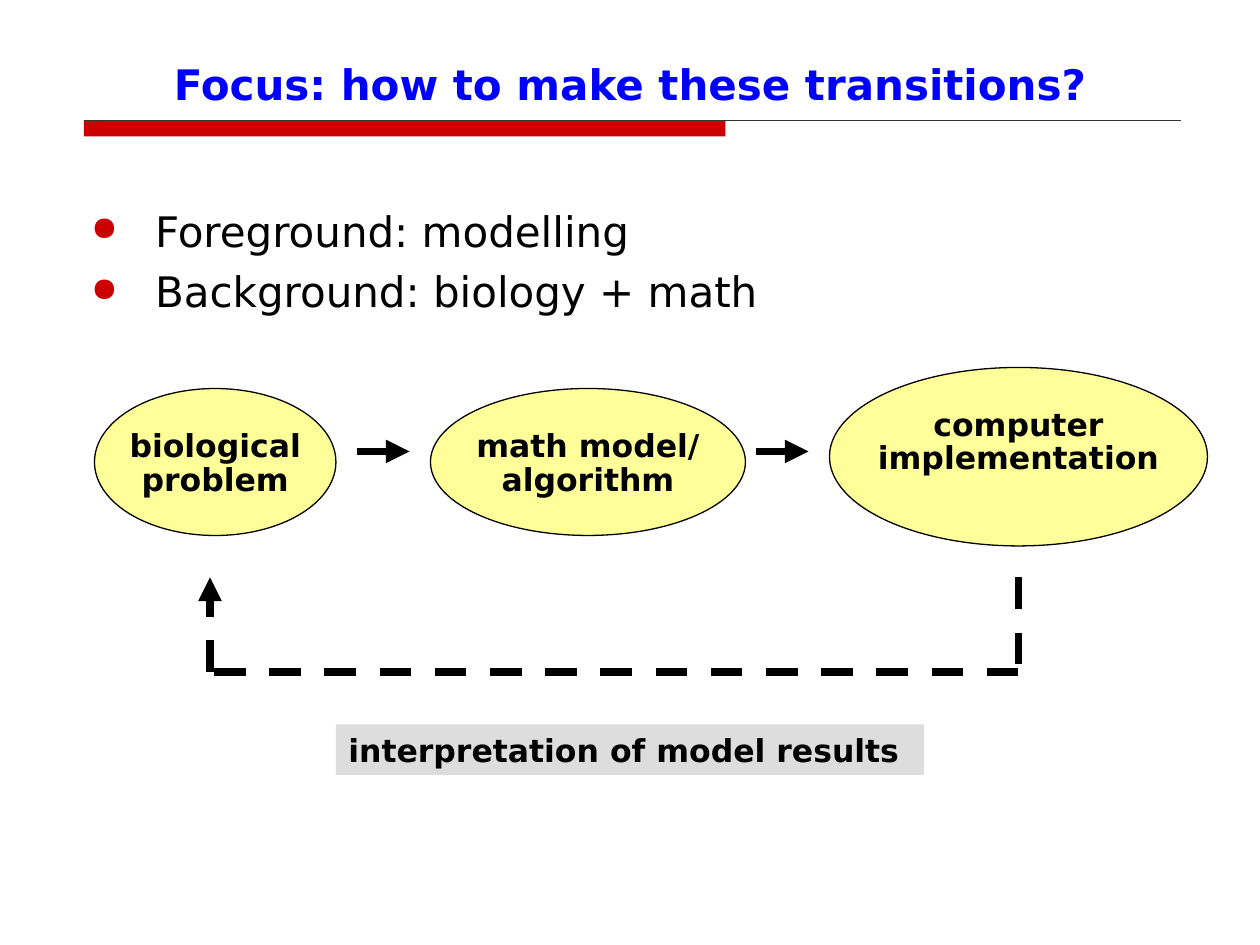
from dataclasses import dataclass
from itertools import pairwise

from lxml.etree import SubElement
from pptx import Presentation
from pptx.dml.color import RGBColor
from pptx.enum.dml import MSO_LINE
from pptx.enum.shapes import MSO_CONNECTOR, MSO_SHAPE
from pptx.enum.text import MSO_ANCHOR, PP_ALIGN
from pptx.oxml.ns import qn
from pptx.util import Emu, Pt

PX = 7620


@dataclass(frozen=True)
class Theme:
    font: str = "DejaVu Sans"
    bullet_font: str = "OpenSymbol"
    title: str = "0000FF"
    ink: str = "000000"
    accent: str = "CC0000"
    rule: str = "333333"
    bubble: str = "FFFF99"
    label: str = "DDDDDD"
    heading_size: int = 24
    label_size: int = 18
    thin: float = 0.75
    thick: float = 4.5


THEME = Theme()


def px(*lengths):
    return [Emu(length * PX) for length in lengths]


def apply(target, values):
    for name, value in values.items():
        setattr(target, name, value)


def style_font(font, size, color, bold):
    apply(font, {"name": THEME.font, "size": Pt(size), "bold": bold})
    font.color.rgb = RGBColor.from_string(color)


def add_filled(slide, preset, box, fill, outline=None):
    shape = slide.shapes.add_shape(preset, *px(*box))
    shape.shadow.inherit = False
    shape.fill.solid()
    shape.fill.fore_color.rgb = RGBColor.from_string(fill)
    if outline:
        shape.line.color.rgb = RGBColor.from_string(outline)
        shape.line.width = Pt(THEME.thin)
    else:
        shape.line.fill.background()
    return shape


def add_line(slide, start, end, color, width, arrow=False, dashed=False):
    connector = slide.shapes.add_connector(MSO_CONNECTOR.STRAIGHT, *px(*start, *end))
    connector.line.color.rgb = RGBColor.from_string(color)
    connector.line.width = Pt(width)
    if dashed:
        connector.line.dash_style = MSO_LINE.DASH
    if arrow:
        SubElement(connector.line._get_or_add_ln(), qn("a:tailEnd"), type="triangle")
    SubElement(connector._element.spPr, qn("a:effectLst"))


def add_bullet(paragraph):
    properties = paragraph._p.get_or_add_pPr()
    apply_indent = {"marL": 61 * PX, "indent": -61 * PX}
    for name, value in apply_indent.items():
        properties.set(name, str(value))
    color = SubElement(properties, qn("a:buClr"))
    SubElement(color, qn("a:srgbClr"), val=THEME.accent)
    SubElement(properties, qn("a:buSzPct"), val="80000")
    SubElement(properties, qn("a:buFont"), typeface=THEME.bullet_font)
    SubElement(properties, qn("a:buChar"), char="●")


def write_lines(frame, lines, size, bold, first_format, next_format, bulleted=False):
    frame.word_wrap = True
    for index, line in enumerate(lines):
        paragraph = frame.add_paragraph() if index else frame.paragraphs[0]
        paragraph.text = line
        if bulleted:
            add_bullet(paragraph)
        apply(paragraph, next_format if index else first_format)
        style_font(paragraph.font, size, THEME.ink, bold)


def add_heading(slide, box, text):
    left, top, width, height = box
    title = slide.shapes.title
    apply(title, dict(zip(("left", "top", "width", "height"), px(*box))))
    title.text_frame.text = text
    apply(title.text_frame, {"vertical_anchor": MSO_ANCHOR.BOTTOM, "word_wrap": True})
    paragraph = title.text_frame.paragraphs[0]
    paragraph.alignment = PP_ALIGN.CENTER
    style_font(paragraph.font, THEME.heading_size, THEME.title, True)
    rule_left, rule_top = left + 5, top + height + 5
    add_filled(slide, MSO_SHAPE.RECTANGLE, (rule_left, rule_top, 611, 15), THEME.accent)
    add_line(slide, (rule_left, rule_top), (left + width, rule_top), THEME.rule, THEME.thin)


def add_bullets(slide, box, lines):
    frame = slide.shapes.add_textbox(*px(*box)).text_frame
    write_lines(frame, lines, THEME.heading_size, False, {}, {"space_before": Pt(5.6)}, True)


def add_bubble(slide, box, inset, lines):
    left, top, width, height = box
    add_filled(slide, MSO_SHAPE.OVAL, box, THEME.bubble, THEME.ink)
    text_box = (left + inset, top + 30, width - 2 * inset, 100)
    frame = slide.shapes.add_textbox(*px(*text_box)).text_frame
    centred = {"alignment": PP_ALIGN.CENTER}
    tight = {**centred, "line_spacing": Pt(10), "space_before": Pt(9)}
    write_lines(frame, lines, THEME.label_size, True, centred, tight)


def add_flow(slide, box):
    left, top, width, height = box
    bubbles = [
        (0, 20, 230, 140, 10, ("biological", "problem")),
        (320, 20, 300, 140, 20, ("math model/", "algorithm")),
        (700, 0, 360, 170, 30, ("computer", "implementation")),
    ]
    for x, y, bubble_width, bubble_height, inset, lines in bubbles:
        add_bubble(slide, (left + x, top + y, bubble_width, bubble_height), inset, lines)
    for x in (250, 630):
        start, end = (left + x, top + 80), (left + x + 50, top + 80)
        add_line(slide, start, end, THEME.ink, THEME.thick, arrow=True)


def add_feedback(slide, box, text):
    left, top, width, height = box
    right, bottom = left + width, top + 90
    corners = [(right, top), (right, bottom), (left, bottom), (left, top)]
    for start, end in pairwise(corners):
        is_last = end == corners[-1]
        add_line(slide, start, end, THEME.ink, THEME.thick, arrow=is_last, dashed=True)
    label_box = (left + 120, top + 140, 560, height - 140)
    label = add_filled(slide, MSO_SHAPE.RECTANGLE, label_box, THEME.label)
    label.text_frame.vertical_anchor = MSO_ANCHOR.TOP
    left_aligned = {"alignment": PP_ALIGN.LEFT}
    write_lines(label.text_frame, [text], THEME.label_size, True, left_aligned, {})


def main():
    presentation = Presentation()
    presentation.slide_width, presentation.slide_height = px(1200, 900)
    slide = presentation.slides.add_slide(presentation.slide_layouts[5])
    add_heading(slide, (75, 40, 1050, 70), "Focus: how to make these transitions?")
    add_bullets(
        slide, (75, 190, 1056, 140), ["Foreground: modelling", "Background: biology + math"]
    )
    add_flow(slide, (90, 350, 1060, 170))
    add_feedback(slide, (200, 550, 770, 188), "interpretation of model results")
    presentation.save("out.pptx")


if __name__ == "__main__":
    main()
